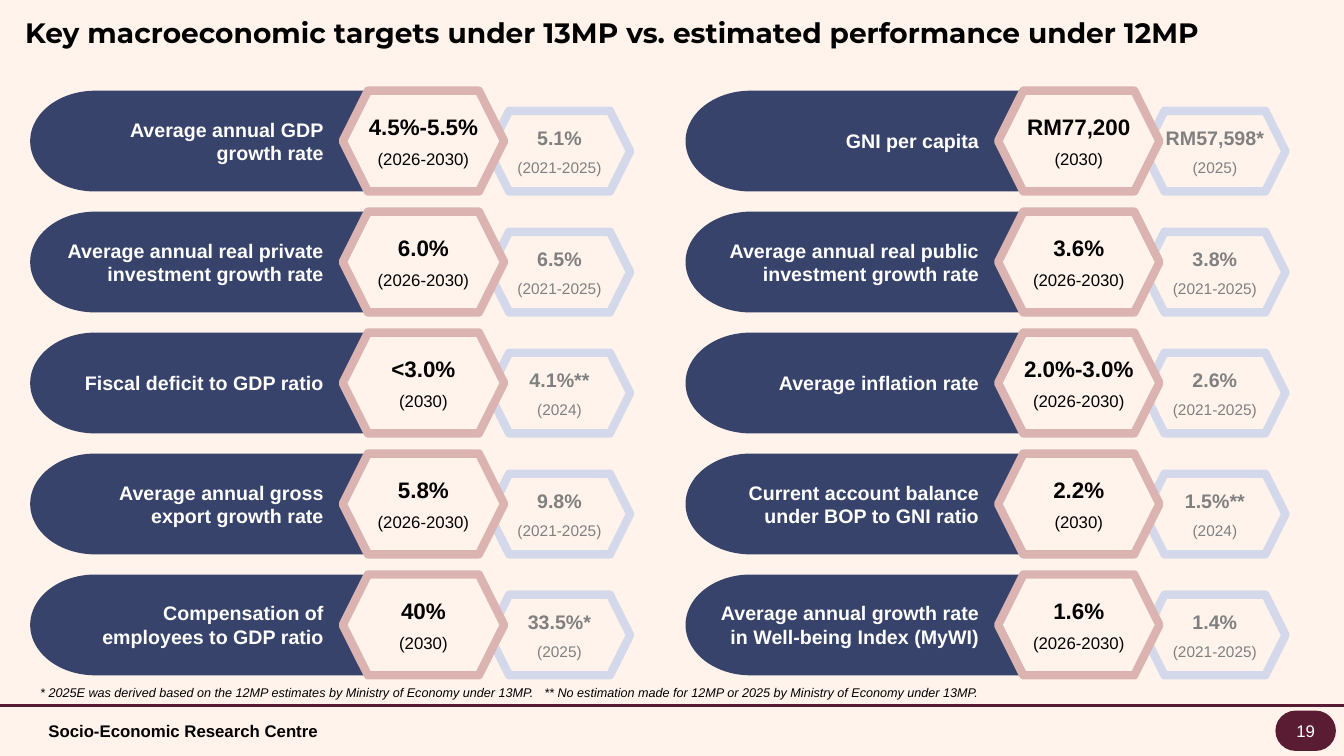
from pptx import Presentation
from pptx.util import Inches, Pt
from pptx.dml.color import RGBColor
from pptx.enum.shapes import MSO_SHAPE as Shape, MSO_CONNECTOR as Line
from pptx.enum.text import MSO_ANCHOR as Anchor, PP_ALIGN as Align
from pptx.oxml.ns import qn
from lxml.etree import SubElement

hex_color = RGBColor.from_string
CREAM, NAVY, PLUM, ROSE, MIST = "FFF3EB", "37436B", "591C32", "DBB3B1", "D3D9EB"
BLACK, WHITE, GREY = "000000", "FFFFFF", "808080"


def add_block(parent, kind, box, fill, outline=None):
    block = parent.add_shape(kind, *map(Inches, box))
    block.shadow.inherit = False
    block.fill.solid()
    block.fill.fore_color.rgb = hex_color(fill)
    if outline:
        block.line.color.rgb = hex_color(outline)
        block.line.width = Pt(6)
    else:
        block.line.fill.background()
    return block


def write(block, lines, color, align, margins, anchor=Anchor.MIDDLE, face="Arial", gap=0, wrap=True):
    frame = block.text_frame
    frame.word_wrap = wrap
    frame.vertical_anchor = anchor
    frame.margin_left, frame.margin_top, frame.margin_right, frame.margin_bottom = map(Inches, margins)
    for i, (text, size, bold, italic) in enumerate(lines):
        paragraph = frame.paragraphs[0] if i == 0 else frame.add_paragraph()
        paragraph.text = text
        paragraph.alignment = align
        if i < len(lines) - 1:
            paragraph.space_after = Pt(gap)
        font = paragraph.font
        font.name, font.size, font.bold, font.italic = face, Pt(size), bold, italic
        font.color.rgb = hex_color(color)


deck = Presentation()
deck.slide_width, deck.slide_height = Inches(13.33), Inches(7.5)
slide = deck.slides.add_slide(deck.slide_layouts[6])
slide.background.fill.solid()
slide.background.fill.fore_color.rgb = hex_color(CREAM)
shapes = slide.shapes

footer_rule = shapes.add_connector(Line.STRAIGHT, 0, Inches(7), deck.slide_width, Inches(7))
footer_rule.line.color.rgb = hex_color(PLUM)
footer_rule.line.width = Pt(2.25)
SubElement(footer_rule._element.spPr, qn("a:effectLst"))

centre_name = shapes.add_textbox(*map(Inches, (0.4, 7.11, 3, 0.28)))
write(centre_name, [("Socio-Economic Research Centre", 12, True, False)], BLACK, Align.LEFT,
      (0.08, 0.04, 0.08, 0.04))

page_badge = add_block(shapes, Shape.ROUNDED_RECTANGLE, (12.65, 7.05, 0.6, 0.4), PLUM)
page_badge.adjustments[0] = 0.5
write(page_badge, [("19", 12, False, False)], WHITE, Align.CENTER, (0, 0, 0, 0), wrap=False)

columns = [
    [
        (["Average annual GDP", "growth rate"], "4.5%-5.5%", "2026-2030", "5.1%", "2021-2025"),
        (["Average annual real private investment growth rate"], "6.0%", "2026-2030", "6.5%", "2021-2025"),
        (["Fiscal deficit to GDP ratio"], "<3.0%", "2030", "4.1%**", "2024"),
        (["Average annual gross export growth rate"], "5.8%", "2026-2030", "9.8%", "2021-2025"),
        (["Compensation of employees to GDP ratio"], "40%", "2030", "33.5%*", "2025"),
    ],
    [
        (["GNI per capita"], "RM77,200", "2030", "RM57,598*", "2025"),
        (["Average annual real public investment growth rate"], "3.6%", "2026-2030", "3.8%", "2021-2025"),
        (["Average inflation rate"], "2.0%-3.0%", "2026-2030", "2.6%", "2021-2025"),
        (["Current account balance under BOP to GNI ratio"], "2.2%", "2030", "1.5%**", "2024"),
        (["Average annual growth rate in Well-being Index (MyWI)"], "1.6%", "2026-2030", "1.4%", "2021-2025"),
    ],
]
LEFT, TOP, COLUMN_STEP, ROW_STEP = 0.3, 0.9, 6.5, 1.2
HEXAGON_MARGINS = (0, 0.05, 0, 0.05)

cells = [(LEFT + c * COLUMN_STEP, TOP + r * ROW_STEP, indicator)
         for c, column in enumerate(columns) for r, indicator in enumerate(column)]

for x, y, (_, _, _, estimate, estimate_years) in cells:
    past = add_block(shapes, Shape.HEXAGON, (x + 4.55, y + 0.2, 1.4, 0.8), CREAM, MIST)
    fill_color = past._element.spPr.find(qn("a:solidFill"))[0]
    SubElement(fill_color, qn("a:alpha")).set("val", "80000")
    write(past, [(estimate, 14, True, False), (f"({estimate_years})", 11, False, False)],
          GREY, Align.CENTER, HEXAGON_MARGINS, gap=6)

title = shapes.add_textbox(*map(Inches, (0.2, 0, 12.8, 0.5)))
write(title, [("Key macroeconomic targets under 13MP vs. estimated performance under 12MP", 20, True, False)],
      BLACK, Align.JUSTIFY, (0.05, 0.15, 0.05, 0.05), Anchor.TOP, "Montserrat")

for x, y, (label, target, target_years, _, _) in cells:
    pair = shapes.add_group_shape().shapes
    banner = add_block(pair, Shape.FLOWCHART_TERMINATOR, (x, y, 4, 1), NAVY)
    write(banner, [(line, 14, True, False) for line in label], WHITE, Align.RIGHT, (0.1, 0.05, 0.9, 0.05))
    goal = add_block(pair, Shape.HEXAGON, (x + 3.1, y, 1.6, 1), CREAM, ROSE)
    write(goal, [(target, 16, True, False), (f"({target_years})", 12, False, False)],
          BLACK, Align.CENTER, HEXAGON_MARGINS, gap=6)

footnote = shapes.add_textbox(*map(Inches, (0.3, 6.75, 9.61, 0.25)))
write(footnote, [("* 2025E was derived based on the 12MP estimates by Ministry of Economy under 13MP.\t"
                  "** No estimation made for 12MP or 2025 by Ministry of Economy under 13MP.", 9, False, True)],
      BLACK, Align.LEFT, (0.1, 0.05, 0.1, 0.05), Anchor.TOP, wrap=False)

deck.save("out.pptx")
